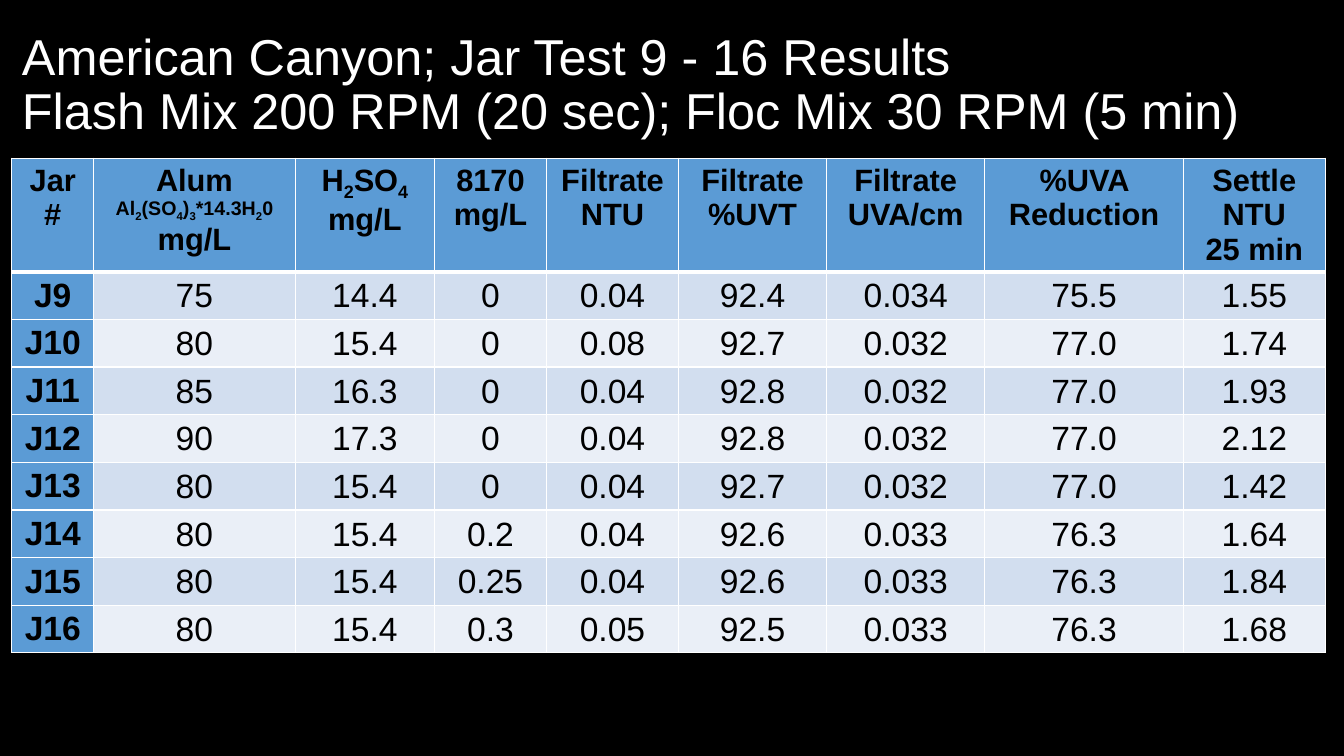
import pptx
import pptx.dml.color
import pptx.enum.text
import pptx.util
import lxml.etree
from pptx.util import Cm


def color(value):
    return pptx.dml.color.RGBColor.from_string(value)


def write(paragraph, text, size=24, fill="000000", bold=False, align="CENTER"):
    paragraph.alignment = getattr(pptx.enum.text.PP_ALIGN, align)
    for index, part in enumerate(text.split("_")):
        run = paragraph.add_run()
        run.text = part
        run.font.name = "Arial"
        run.font.size = pptx.util.Pt(size)
        run.font.bold = bold
        run.font.color.rgb = color(fill)
        if index % 2:
            run.font._element.set("baseline", "-25000")


presentation = pptx.Presentation()
presentation.slide_width = Cm(33.87)
presentation.slide_height = Cm(19.05)
slide = presentation.slides.add_slide(presentation.slide_layouts[5])
slide.background.fill.solid()
slide.background.fill.fore_color.rgb = color("000000")

title = slide.shapes.title
title.left, title.top, title.width, title.height = Cm(0.3), Cm(0.33), Cm(33.1), Cm(3.68)
title.text_frame.auto_size = pptx.enum.text.MSO_AUTO_SIZE.NONE
title.text_frame.word_wrap = True
title.text_frame.vertical_anchor = pptx.enum.text.MSO_ANCHOR.MIDDLE
heading = title.text_frame.paragraphs[0]
heading.line_spacing = 0.9
write(heading, "American Canyon; Jar Test 9 - 16 Results", size=36, fill="FFFFFF", align="LEFT")
heading.add_line_break()
write(heading, "Flash Mix 200 RPM (20 sec); Floc Mix 30 RPM (5 min)", size=36, fill="FFFFFF", align="LEFT")

formula = "Al_2_(SO_4_)_3_*14.3H_2_0"
rows = [
    ["Jar#", f"Alum\n{formula}\nmg/L", "H_2_SO_4_\nmg/L", "8170\nmg/L", "Filtrate\nNTU",
     "Filtrate\n%UVT", "Filtrate\nUVA/cm", "%UVA Reduction", "Settle\nNTU\n25 min"],
    ["J9", "75", "14.4", "0", "0.04", "92.4", "0.034", "75.5", "1.55"],
    ["J10", "80", "15.4", "0", "0.08", "92.7", "0.032", "77.0", "1.74"],
    ["J11", "85", "16.3", "0", "0.04", "92.8", "0.032", "77.0", "1.93"],
    ["J12", "90", "17.3", "0", "0.04", "92.8", "0.032", "77.0", "2.12"],
    ["J13", "80", "15.4", "0", "0.04", "92.7", "0.032", "77.0", "1.42"],
    ["J14", "80", "15.4", "0.2", "0.04", "92.6", "0.033", "76.3", "1.64"],
    ["J15", "80", "15.4", "0.25", "0.04", "92.6", "0.033", "76.3", "1.84"],
    ["J16", "80", "15.4", "0.3", "0.05", "92.5", "0.033", "76.3", "1.68"],
]
widths = [2.06, 5.08, 3.51, 2.82, 3.33, 3.73, 3.99, 5, 3.58]
table = slide.shapes.add_table(
    len(rows), len(widths), Cm(0.3), Cm(3.99), Cm(sum(widths)), Cm(12.46)).table
table.first_col = True
for column, width in zip(table.columns, widths):
    column.width = Cm(width)

for row_index, values in enumerate(rows):
    table.rows[row_index].height = Cm(1.2 if row_index else 2.86)
    for column_index, value in enumerate(values):
        cell = table.cell(row_index, column_index)
        is_label = row_index == 0 or column_index == 0

        properties = cell._tc.get_or_add_tcPr()
        for side in ("lnL", "lnR", "lnT", "lnB"):
            thick = (row_index, side) in ((0, "lnB"), (1, "lnT"))
            line = lxml.etree.SubElement(properties, pptx.oxml.ns.qn(f"a:{side}"))
            line.set("w", str(pptx.util.Pt(3 if thick else 1)))
            solid = lxml.etree.SubElement(line, pptx.oxml.ns.qn("a:solidFill"))
            lxml.etree.SubElement(solid, pptx.oxml.ns.qn("a:srgbClr")).set("val", "FFFFFF")

        cell.fill.solid()
        band = "D2DEEF" if row_index % 2 else "EAEFF7"
        cell.fill.fore_color.rgb = color("5B9BD5" if is_label else band)
        if not is_label:
            cell.vertical_anchor = pptx.enum.text.MSO_ANCHOR.MIDDLE
            cell.margin_left = cell.margin_right = cell.margin_top = Cm(0.03)
            cell.margin_bottom = 0

        for line_index, text in enumerate(value.split("\n")):
            frame = cell.text_frame
            paragraph = frame.add_paragraph() if line_index else frame.paragraphs[0]
            size = 14 if text == formula else 24 if row_index else 22
            write(paragraph, text.removesuffix("_") if text.count("_") % 2 else text,
                  size=size, bold=is_label)

presentation.save("out.pptx")
